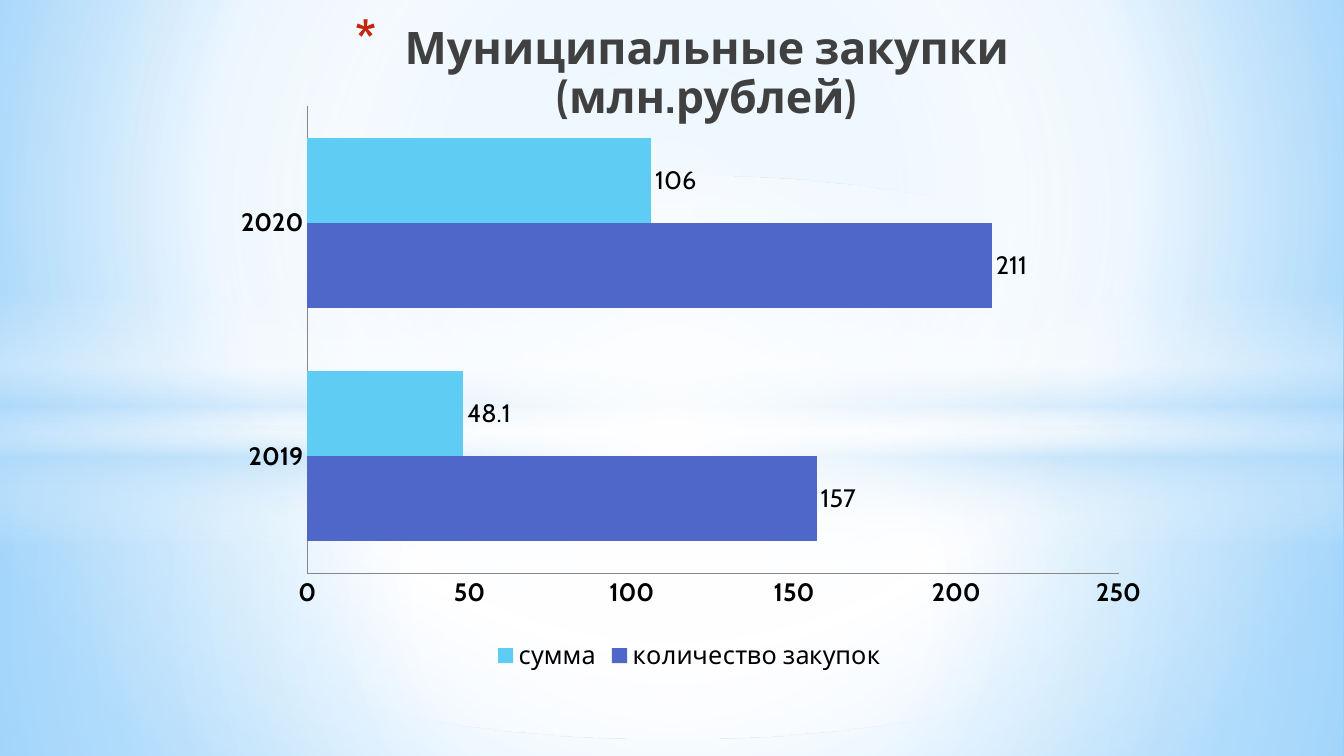
from lxml import etree
from pptx import Presentation
from pptx.chart.data import CategoryChartData
from pptx.dml.color import RGBColor
from pptx.enum.chart import XL_CHART_TYPE, XL_LABEL_POSITION, XL_LEGEND_POSITION, XL_TICK_MARK
from pptx.enum.shapes import MSO_SHAPE
from pptx.enum.text import MSO_ANCHOR, MSO_AUTO_SIZE, PP_ALIGN
from pptx.oxml import parse_xml
from pptx.oxml.ns import nsdecls, qn
from pptx.util import Pt

RECT, OVAL = MSO_SHAPE.RECTANGLE, MSO_SHAPE.OVAL
BAR = XL_CHART_TYPE.BAR_CLUSTERED
NONE = XL_TICK_MARK.NONE
OUTSIDE = XL_LABEL_POSITION.OUTSIDE_END
BOTTOM = XL_LEGEND_POSITION.BOTTOM

FONT = "Cabin"
BLACK = RGBColor(0x00, 0x00, 0x00)
DARK = RGBColor(0x40, 0x40, 0x40)
GREY = RGBColor(0x87, 0x87, 0x87)
RED = RGBColor(0xC3, 0x26, 0x0C)
BLUE = RGBColor(0x4E, 0x67, 0xC8)
SKY = RGBColor(0x5E, 0xCC, 0xF3)
WHITE = RGBColor(0xFF, 0xFF, 0xFF)
PALE = RGBColor(0xB4, 0xDC, 0xFA)
LIGHT = RGBColor(0x9E, 0xD5, 0xFF)
DEEP = RGBColor(0x5B, 0xB9, 0xFF)

# Content
TITLE = "Муниципальные закупки (млн.рублей)"
YEARS = ["2019", "2020"]
SERIES = [("количество закупок", (157, 211), BLUE), ("сумма", (48.1, 106), SKY)]

# Layout in px; gradient stops are (position, colour, opacity) in percent
SIZE = (1344, 756)
TITLE_BOX = (187, 21, 969, 80)
CHART_BOX = (220, 93, 939, 583)
PLOT = {"x": 0.093, "y": 0.022, "w": 0.864, "h": 0.802}
MID = (50, 50, 50, 50)
BACK = [(0, LIGHT, 100), (60, WHITE, 100), (100, DEEP, 100)]
BACK_FOCUS = (20, 10, 20, 60)
GLOWS = [
    (RECT, (0, 426, 1344, 330), [(0, WHITE, 91), (37, WHITE, 76), (100, PALE, 79)], MID),
    (RECT, (0, 0, 1344, 426), [(0, WHITE, 89), (48, WHITE, 62), (100, PALE, 79)], MID),
    (RECT, (0, 292, 1344, 252),
     [(0, WHITE, 0), (29, WHITE, 30), (45, PALE, 40), (55, WHITE, 26),
      (65, PALE, 60), (100, WHITE, 0)], None),
    (OVAL, (0, 176, 1344, 563), [(0, WHITE, 100), (54, WHITE, 0)], MID),
]


def emu(box):
    return [round(n * 914400 / 100.8) for n in box]


def blend(owner, stops, focus):
    """Swap the default gradient in owner for the given one."""
    gs = "".join(
        f'<a:gs pos="{pos * 1000}"><a:srgbClr val="{color}">'
        f'<a:alpha val="{alpha * 1000}"/></a:srgbClr></a:gs>'
        for pos, color, alpha in stops)
    if focus:
        sides = " ".join(f'{s}="{n * 1000}"' for s, n in zip("ltrb", focus))
        way = f'<a:path path="circle"><a:fillToRect {sides}/></a:path>'
    else:
        way = '<a:lin ang="5400000" scaled="0"/>'
    new = parse_xml(f'<a:gradFill {nsdecls("a")} rotWithShape="1">'
                    f'<a:gsLst>{gs}</a:gsLst>{way}</a:gradFill>')
    old = owner.find(".//" + qn("a:gradFill"))
    old.getparent().replace(old, new)


def style(font, size, color, bold):
    font.name, font.size, font.bold = FONT, Pt(size), bold
    font.color.rgb = color


prs = Presentation()
prs.slide_width, prs.slide_height = emu(SIZE)
slide = prs.slides.add_slide(prs.slide_layouts[5])

# Background and glows
slide.background.fill.gradient()
blend(slide._element, BACK, BACK_FOCUS)
for kind, box, stops, focus in GLOWS:
    glow = slide.shapes.add_shape(kind, *emu(box))
    glow.shadow.inherit = False
    glow.line.fill.background()
    glow.fill.gradient()
    blend(glow._element, stops, focus)

# Title, in front of the glows
title = slide.shapes.title
slide.shapes._spTree.append(title._element)
title.left, title.top, title.width, title.height = emu(TITLE_BOX)
frame = title.text_frame
frame.text = TITLE
frame.word_wrap = True
frame.auto_size = MSO_AUTO_SIZE.NONE
frame.vertical_anchor = MSO_ANCHOR.TOP
para = frame.paragraphs[0]
para.alignment = PP_ALIGN.CENTER
para.line_spacing = 0.9
style(para.runs[0].font, 32, DARK, True)
props = para._p.get_or_add_pPr()
indent, hang = emu((71, -50))
props.set("marL", str(indent))
props.set("indent", str(hang))
color = etree.SubElement(props, qn("a:buClr"))
etree.SubElement(color, qn("a:srgbClr"), val=str(RED))
etree.SubElement(props, qn("a:buSzPct"), val="128000")
etree.SubElement(props, qn("a:buChar"), char="*")

# Chart
data = CategoryChartData()
data.categories = YEARS
for name, vals, _ in SERIES:
    data.add_series(name, vals)
chart = slide.shapes.add_chart(BAR, *emu(CHART_BOX), data).chart
chart.has_title = False
style(chart.font, 18, BLACK, False)
plot = chart.plots[0]
plot.gap_width = 75
plot.overlap = 0
plot.vary_by_categories = False
for series, (_, _, color) in zip(plot.series, SERIES):
    series.format.fill.solid()
    series.format.fill.fore_color.rgb = color
    labels = series.data_labels
    labels.show_value = True
    labels.position = OUTSIDE

# Axes and legend
for axis in (chart.category_axis, chart.value_axis):
    axis.has_major_gridlines = False
    axis.major_tick_mark = axis.minor_tick_mark = NONE
    axis.format.line.color.rgb = GREY
    axis.format.line.width = Pt(0.75)
    style(axis.tick_labels.font, 18, BLACK, True)
chart.value_axis.minimum_scale = 0
chart.value_axis.maximum_scale = 250
chart.value_axis.major_unit = 50
chart.has_legend = True
chart.legend.position = BOTTOM
chart.legend.include_in_layout = False

# Fixed inner plot area
area = chart._chartSpace.find(".//" + qn("c:plotArea"))
for old in area.findall(qn("c:layout")):
    area.remove(old)
modes = '<c:xMode val="edge"/><c:yMode val="edge"/>'
sizes = "".join(f'<c:{key} val="{val}"/>' for key, val in PLOT.items())
area.insert(0, parse_xml(
    f'<c:layout {nsdecls("c")}><c:manualLayout><c:layoutTarget val="inner"/>'
    f'{modes}{sizes}</c:manualLayout></c:layout>'))

prs.save("out.pptx")
